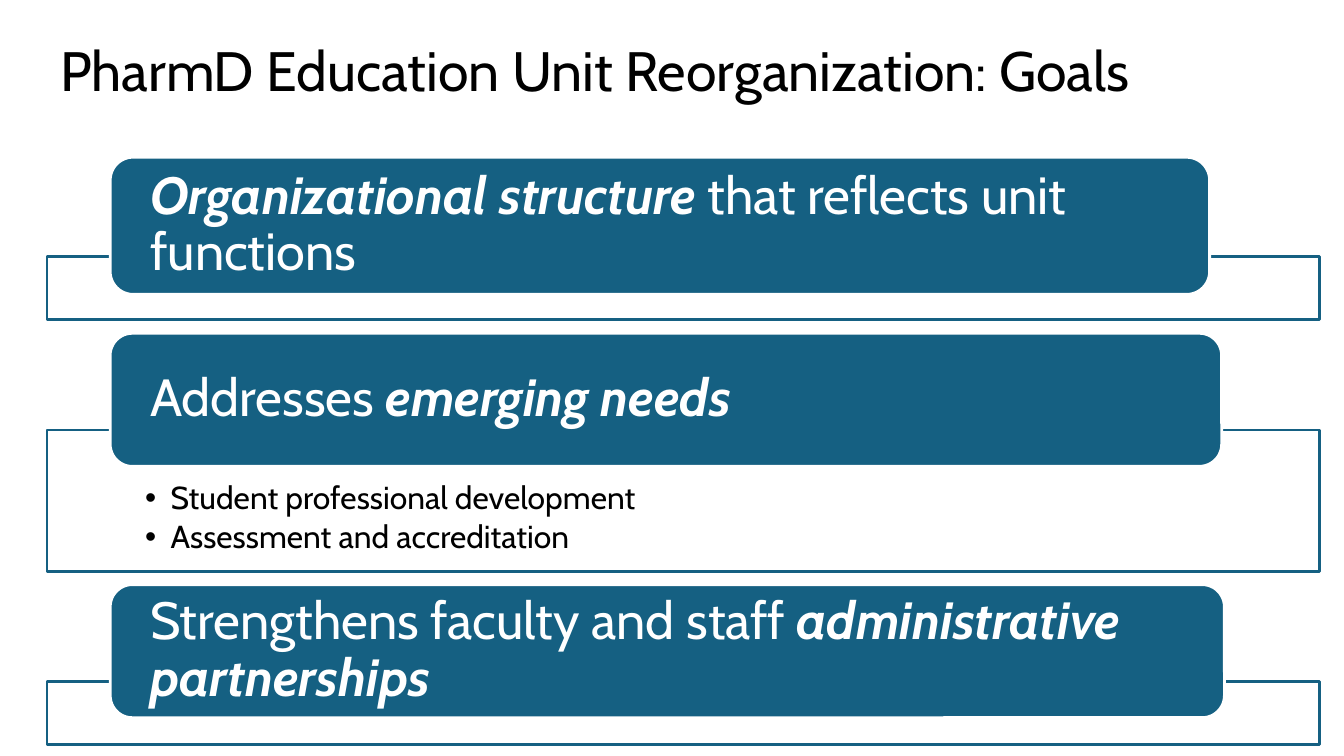
from pptx import Presentation
from pptx.dml.color import RGBColor
from pptx.enum.shapes import MSO_SHAPE
from pptx.enum.text import MSO_ANCHOR, PP_ALIGN
from pptx.oxml.ns import qn
from pptx.util import Inches, Pt
from lxml import etree

RECT, ROUNDED = MSO_SHAPE.RECTANGLE, MSO_SHAPE.ROUNDED_RECTANGLE
TOP, MIDDLE = MSO_ANCHOR.TOP, MSO_ANCHOR.MIDDLE
LEFT = PP_ALIGN.LEFT
BLUE, WHITE, BLACK = "156082", "FFFFFF", "000000"
FONT = "Cabin"

GOALS = [
    dict(top=1.91, height=0.47, bar_top=1.17, bar_width=8.18, bar_height=1.02,
         heading=[("Organizational structure ", True), ("that reflects unit functions", False)]),
    dict(top=3.2, height=1.05, bar_top=2.48, bar_width=8.27, bar_height=0.99,
         heading=[("Addresses ", False), ("emerging needs", True)],
         bullets=["Student professional development", "Assessment and accreditation"]),
    dict(top=5.07, height=0.47, bar_top=4.35, bar_width=8.29, bar_height=0.99,
         heading=[("Strengthens faculty and staff ", False),
                  ("administrative partnerships", True)]),
]


def rgb(value):
    """Turn a hex string into a colour."""
    return RGBColor.from_string(value)


def add_bullet(p, indent):
    """Give a paragraph a hanging round bullet."""
    pPr = p._p.get_or_add_pPr()
    pPr.set("marL", str(Inches(indent)))
    pPr.set("indent", str(-Inches(indent)))
    etree.SubElement(pPr, qn("a:buFont")).set("typeface", "Arial")
    etree.SubElement(pPr, qn("a:buChar")).set("char", "•")


def write_text(sp, paragraphs, size, color, margins, anchor=MIDDLE, after=0, bullet=None):
    """Write paragraphs of (text, emphasis) runs into a shape."""
    tf = sp.text_frame
    tf.word_wrap = True
    tf.vertical_anchor = anchor
    tf.margin_left, tf.margin_top, tf.margin_right, tf.margin_bottom = map(Inches, margins)
    for i, runs in enumerate(paragraphs):
        p = tf.paragraphs[0] if i == 0 else tf.add_paragraph()
        p.alignment = LEFT
        p.line_spacing = 0.9
        p.space_after = Pt(after)
        if bullet:
            p.level = 1
            add_bullet(p, bullet)
        for text, emphasis in runs:
            r = p.add_run()
            r.text = text
            r.font.name = FONT
            r.font.size = Pt(size)
            r.font.color.rgb = rgb(color)
            r.font.bold = r.font.italic = emphasis


def add_box(s, kind, box, fill, line, alpha=None):
    """Add a filled and outlined shape, optionally see-through."""
    sp = s.shapes.add_shape(kind, *map(Inches, box))
    sp.shadow.inherit = False
    sp.fill.solid()
    sp.fill.fore_color.rgb = rgb(fill)
    sp.line.color.rgb = rgb(line)
    sp.line.width = Pt(1.5)
    if alpha:
        color = sp._element.spPr.find(qn("a:solidFill"))[0]
        etree.SubElement(color, qn("a:alpha")).set("val", str(alpha * 1000))
    return sp


def add_title(s, box, text):
    """Add the slide title."""
    sp = s.shapes.add_textbox(*map(Inches, box))
    write_text(sp, [[(text, False)]], 29.7, BLACK, (0.1, 0.05, 0.1, 0.05))


def add_goal(s, left, width, top, height, bar_top, bar_width, bar_height, heading, bullets=()):
    """Add one goal: an outlined panel with a heading bar over its top edge."""
    panel = add_box(s, RECT, (left, top, width, height), WHITE, BLUE, alpha=90)
    if bullets:
        write_text(panel, [[(b, False)] for b in bullets], 17, BLACK,
                   (0.73, 0.39, 0.73, 0.13), anchor=TOP, after=2.55, bullet=0.19)
    bar = add_box(s, ROUNDED, (left + 0.47, bar_top, bar_width, bar_height), BLUE, WHITE)
    write_text(bar, [heading], 28, WHITE, (0.25, 0, 0.25, 0))


def main():
    """Build the slide and save it."""
    prs = Presentation()
    prs.slide_width = Inches(10)
    prs.slide_height = prs.slide_width * 9 // 16
    s = prs.slides.add_slide(prs.slide_layouts[6])
    add_title(s, (0.35, 0, 8.62, 1.09), "PharmD Education Unit Reorganization: Goals")
    for goal in GOALS:
        add_goal(s, 0.35, 9.47, **goal)
    prs.save("out.pptx")


if __name__ == "__main__":
    main()
